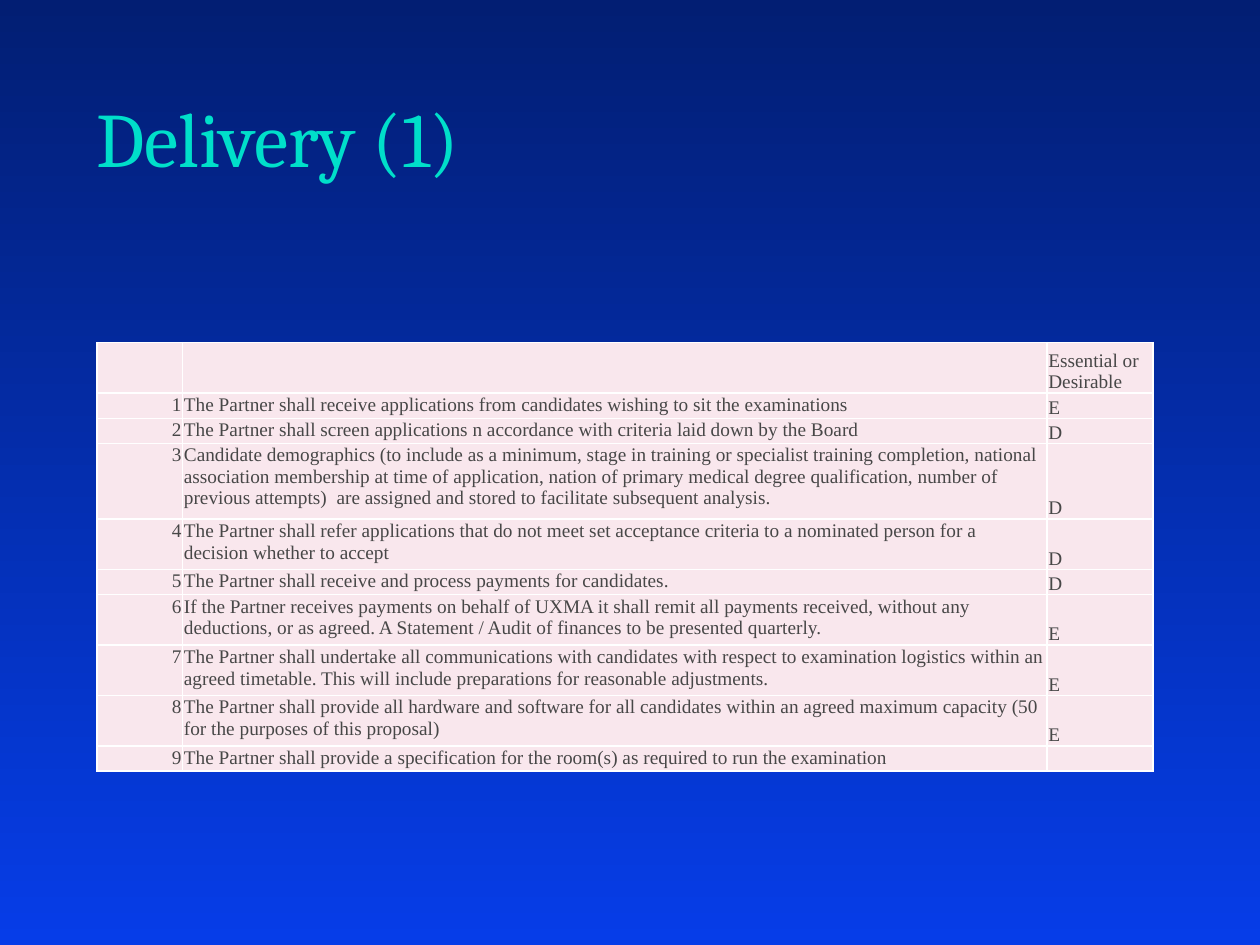
from lxml.etree import SubElement
from pptx import Presentation
from pptx.dml.color import RGBColor
from pptx.enum.text import MSO_ANCHOR, PP_ALIGN
from pptx.oxml.ns import qn
from pptx.util import Inches, Pt

WIDTH, HEIGHT = 10, 7.5
LINE = 0.2
COLUMNS = (0.68, 6.86, 0.84)
ALIGNS = (PP_ALIGN.RIGHT, PP_ALIGN.LEFT, PP_ALIGN.LEFT)
ANCHORS = (MSO_ANCHOR.TOP, MSO_ANCHOR.TOP, MSO_ANCHOR.BOTTOM)
REQUIREMENTS = (
    (1, "The Partner shall receive applications from candidates wishing to sit the examinations", "E"),
    (1, "The Partner shall screen applications n accordance with criteria laid down by the Board", "D"),
    (3, "Candidate demographics (to include as a minimum, stage in training or specialist training "
        "completion, national association membership at time of application, nation of primary medical "
        "degree qualification, number of previous attempts)  are assigned and stored to facilitate "
        "subsequent analysis.", "D"),
    (2, "The Partner shall refer applications that do not meet set acceptance criteria to a nominated "
        "person for a decision whether to accept", "D"),
    (1, "The Partner shall receive and process payments for candidates.", "D"),
    (2, "If the Partner receives payments on behalf of UXMA it shall remit all payments received, without "
        "any deductions, or as agreed. A Statement / Audit of finances to be presented quarterly.", "E"),
    (2, "The Partner shall undertake all communications with candidates with respect to examination "
        "logistics within an agreed timetable. This will include preparations for reasonable "
        "adjustments.", "E"),
    (2, "The Partner shall provide all hardware and software for all candidates within an agreed maximum "
        "capacity (50 for the purposes of this proposal)", "E"),
    (1, "The Partner shall provide a specification for the room(s) as required to run the examination", ""),
)


def color(code):
    """Turn a hex string into a colour."""
    return RGBColor.from_string(code)


def write(paragraph, text, size=11, font="Times New Roman", ink="474747", align=PP_ALIGN.LEFT):
    """Write formatted text into a paragraph."""
    paragraph.alignment = align
    if not text:
        SubElement(paragraph._p, qn("a:endParaRPr"), sz=str(size * 100))
        return
    run = paragraph.add_run()
    run.text = text
    run.font.size = Pt(size)
    run.font.name = font
    run.font.color.rgb = color(ink)


class Deck:
    """Hold the style and the current slide."""

    cell_fill = "F9E7ED"
    border = "FFFFFF"
    accent = "00DFCA"

    def __init__(self, presentation):
        """Add a blank slide."""
        self.slide = presentation.slides.add_slide(presentation.slide_layouts[6])

    def background(self, top, bottom):
        """Fill the slide with a vertical gradient."""
        fill = self.slide.background.fill
        fill.gradient()
        fill.gradient_angle = 270
        for stop, code in zip(fill.gradient_stops, (top, bottom)):
            stop.color.rgb = color(code)

    def title(self, text, left, top, width, height):
        """Add the heading."""
        frame = self.slide.shapes.add_textbox(*map(Inches, (left, top, width, height))).text_frame
        frame.word_wrap = True
        frame.vertical_anchor = MSO_ANCHOR.BOTTOM
        write(frame.paragraphs[0], text, size=44, font="Cambria", ink=self.accent)

    def cell(self, cell, text, align, anchor):
        """Fill, frame and write one table cell."""
        cell.margin_left = cell.margin_right = cell.margin_top = Inches(0.01)
        cell.margin_bottom = 0
        cell.vertical_anchor = anchor
        properties = cell._tc.get_or_add_tcPr()
        for side in ("lnL", "lnR", "lnT", "lnB"):
            line = SubElement(properties, qn(f"a:{side}"), w=str(Pt(1)))
            SubElement(SubElement(line, qn("a:solidFill")), qn("a:srgbClr"), val=self.border)
        cell.fill.solid()
        cell.fill.fore_color.rgb = color(self.cell_fill)
        write(cell.text_frame.paragraphs[0], text, align=align)

    def table(self, rows, left, top):
        """Add a table from rows of line count and texts."""
        height = LINE * sum(lines for lines, _ in rows)
        box = map(Inches, (left, top, sum(COLUMNS), height))
        table = self.slide.shapes.add_table(len(rows), len(COLUMNS), *box).table
        for column, width in zip(table.columns, COLUMNS):
            column.width = Inches(width)
        for row, (lines, texts) in zip(table.rows, rows):
            row.height = Inches(LINE * lines)
            for cell, text, align, anchor in zip(row.cells, texts, ALIGNS, ANCHORS):
                self.cell(cell, text, align, anchor)


presentation = Presentation()
presentation.slide_width, presentation.slide_height = Inches(WIDTH), Inches(HEIGHT)
deck = Deck(presentation)
deck.background("021E73", "063DE8")
deck.title("Delivery (1)", 0.67, 0.25, 8.58, 1.25)
header = (2, ("", "", "Essential or Desirable"))
numbered = [(lines, (str(number), text, grade))
            for number, (lines, text, grade) in enumerate(REQUIREMENTS, 1)]
deck.table([header, *numbered], 0.77, 2.72)
presentation.save("out.pptx")
